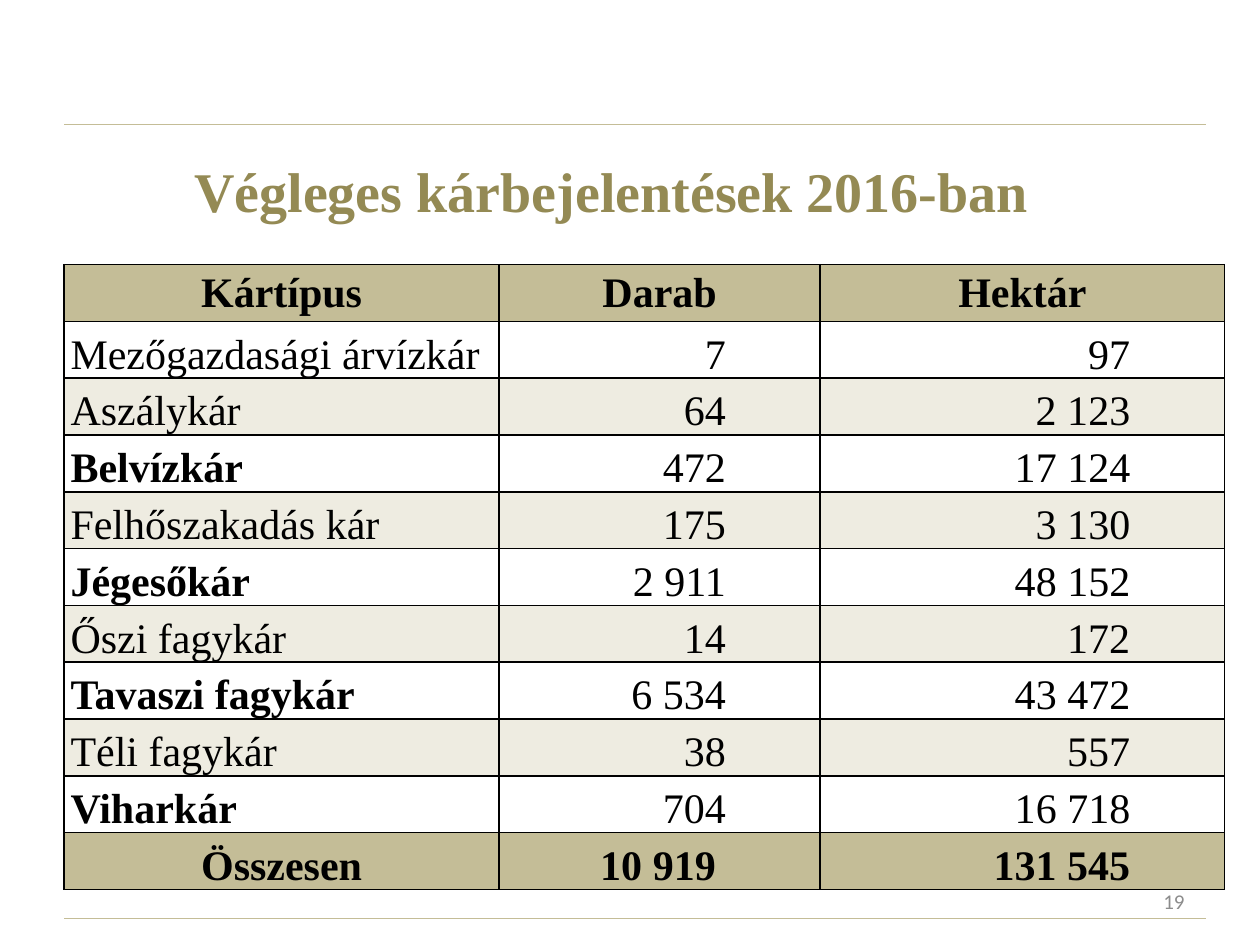
from lxml import etree
from pptx import Presentation
from pptx.dml.color import RGBColor
from pptx.enum.shapes import MSO_CONNECTOR
from pptx.enum.text import MSO_ANCHOR, PP_ALIGN
from pptx.oxml import parse_xml
from pptx.oxml.ns import nsdecls, qn
from pptx.util import Inches, Pt

KHAKI, CREAM, OLIVE = "C4BD97", "EEECE1", "948A54"
GREY, BLACK = "8C8C8C", "000000"
SERIF = "Times New Roman"


def color(hex_string):
    return RGBColor.from_string(hex_string)


def add_text(paragraph, text, size, font, hex_string, align, bold=False):
    paragraph.alignment = align
    run = paragraph.add_run()
    run.text = text
    run.font.size = Pt(size)
    run.font.name = font
    run.font.bold = bold
    run.font.color.rgb = color(hex_string)


presentation = Presentation()
presentation.slide_width = Inches(10)
presentation.slide_height = Inches(7.5)
slide = presentation.slides.add_slide(presentation.slide_layouts[5])

# Rules at the top and bottom
for y in (7.29, 0.99):
    rule = slide.shapes.add_connector(
        MSO_CONNECTOR.STRAIGHT, Inches(0.51), Inches(y), Inches(9.57), Inches(y))
    rule.line.color.rgb = color(KHAKI)
    rule.line.width = Pt(0.75)
    etree.SubElement(rule.element.spPr, qn("a:effectLst"))

# Title
title = slide.shapes.title
title.left, title.top = Inches(0.2), Inches(1.07)
title.width, title.height = Inches(9.31), Inches(0.87)
title.text_frame.vertical_anchor = MSO_ANCHOR.MIDDLE
add_text(title.text_frame.paragraphs[0], "Végleges kárbejelentések 2016-ban",
         32, SERIF, OLIVE, PP_ALIGN.CENTER, True)

# Slide number
number = slide.shapes.add_textbox(Inches(7.17), Inches(6.95), Inches(2.33), Inches(0.4))
number.text_frame.word_wrap = True
number.text_frame.vertical_anchor = MSO_ANCHOR.MIDDLE
add_text(number.text_frame.paragraphs[0], "19", 12, "Calibri", GREY, PP_ALIGN.RIGHT)

# Damage table: the flag marks a bold damage type
header = ("Kártípus", "Darab", "Hektár")
damages = [
    ("Mezőgazdasági árvízkár", "7", "97", False),
    ("Aszálykár", "64", "2 123", False),
    ("Belvízkár", "472", "17 124", True),
    ("Felhőszakadás kár", "175", "3 130", False),
    ("Jégesőkár", "2 911", "48 152", True),
    ("Őszi fagykár", "14", "172", False),
    ("Tavaszi fagykár", "6 534", "43 472", True),
    ("Téli fagykár", "38", "557", False),
    ("Viharkár", "704", "16 718", True),
]
total = ("Összesen", "10 919", "131 545")
rows = [header] + [damage[:3] for damage in damages] + [total]
last = len(rows) - 1

table = slide.shapes.add_table(
    len(rows), 3, Inches(0.51), Inches(2.1), Inches(9.21), Inches(4.96)).table
for column, width in zip(table.columns, (3.45, 2.55, 3.21)):
    column.width = Inches(width)

for i, values in enumerate(rows):
    table.rows[i].height = Inches(4.96 / len(rows))
    edge_row = i in (0, last)
    for j, text in enumerate(values):
        cell = table.cell(i, j)
        is_number = i > 0 and j > 0
        cell.margin_top = cell.margin_bottom = 0
        cell.margin_left = Inches(0.04 if is_number else 0.05)
        cell.margin_right = Inches(0.75 if is_number else 0.05)
        if i == last and j == 1:
            cell.margin_right = Inches(0.83)
        cell.vertical_anchor = MSO_ANCHOR.BOTTOM if i else MSO_ANCHOR.MIDDLE

        # Borders come before the fill in the cell properties
        properties = cell._tc.get_or_add_tcPr()
        for side in ("lnL", "lnR", "lnT", "lnB"):
            properties.append(parse_xml(
                f'<a:{side} {nsdecls("a")} w="12700"><a:solidFill>'
                f'<a:srgbClr val="{BLACK}"/></a:solidFill></a:{side}>'))
        if edge_row or i % 2 == 0:
            cell.fill.solid()
            cell.fill.fore_color.rgb = color(KHAKI if edge_row else CREAM)
        else:
            cell.fill.background()

        if is_number:
            align = PP_ALIGN.RIGHT
        else:
            align = PP_ALIGN.CENTER if edge_row else PP_ALIGN.LEFT
        bold = edge_row or (j == 0 and damages[i - 1][3])
        add_text(cell.text_frame.paragraphs[0], text, 24, SERIF, BLACK, align, bold)

presentation.save("out.pptx")
